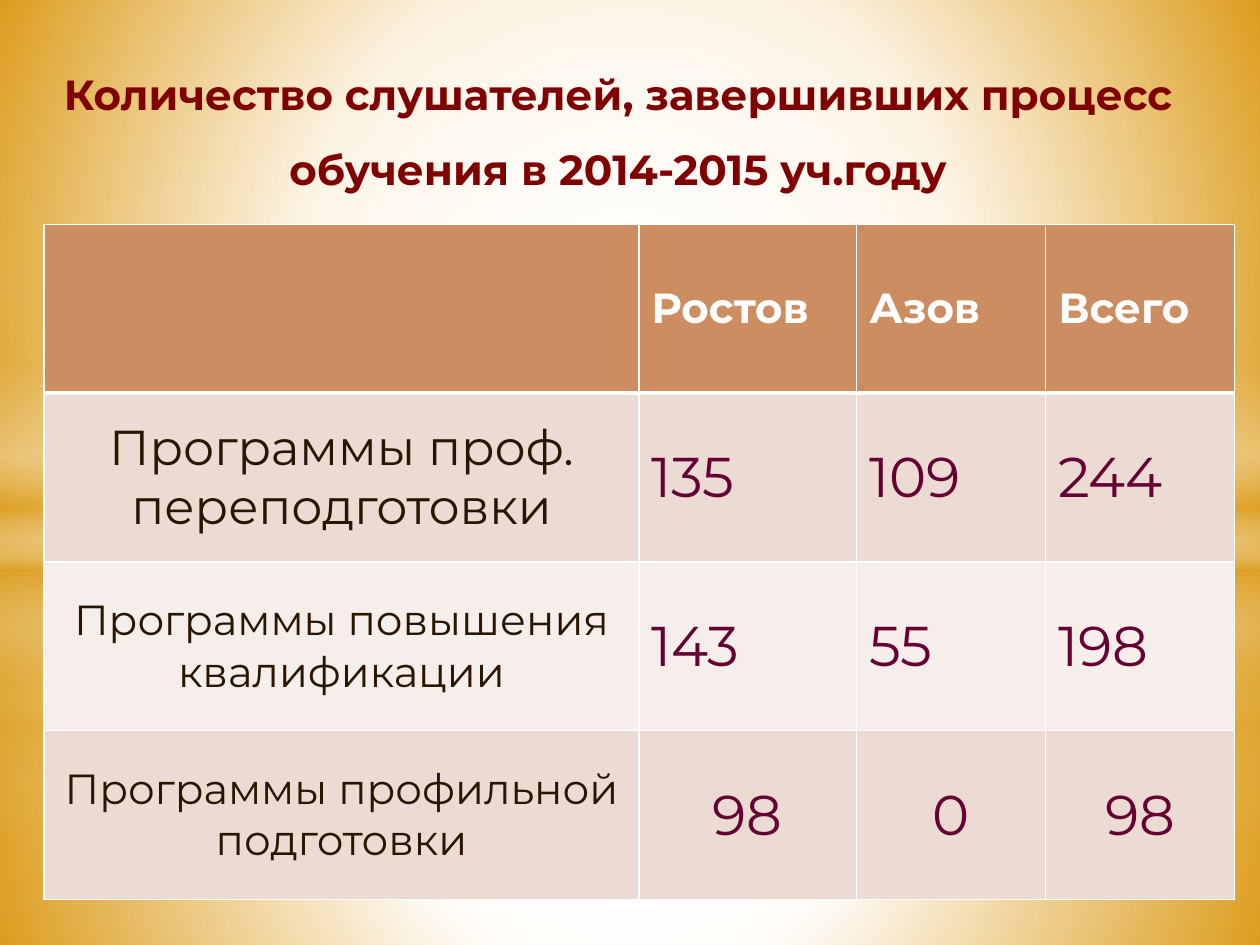
from dataclasses import dataclass

from lxml import etree
from pptx import Presentation
from pptx.dml.color import RGBColor
from pptx.enum.shapes import MSO_SHAPE
from pptx.enum.text import MSO_ANCHOR, MSO_AUTO_SIZE, PP_ALIGN
from pptx.oxml.ns import qn
from pptx.util import Inches, Pt

RECTANGLE, OVAL = MSO_SHAPE.RECTANGLE, MSO_SHAPE.OVAL
TOP, MIDDLE = MSO_ANCHOR.TOP, MSO_ANCHOR.MIDDLE
LEFT, CENTER = PP_ALIGN.LEFT, PP_ALIGN.CENTER
TITLE_ONLY_LAYOUT = 5


@dataclass(frozen=True)
class Theme:
    font: str = "Montserrat"
    title: str = "800000"
    white: str = "FFFFFF"
    gold: str = "DC9E1F"
    header_fill: str = "CC8E60"
    band_fills: tuple = ("ECDBD2", "F6EEEA")
    label: str = "2A1500"
    number: str = "660033"
    text_size: int = 24
    large_label_size: int = 28
    number_size: int = 32


THEME = Theme()
WHITE, GOLD = THEME.white, THEME.gold
CENTERED = (50, 50, 50, 50)

TITLE = "Количество слушателей, завершивших процесс обучения в 2014-2015 уч.году"
HEADERS = ("", "Ростов", "Азов", "Всего")
# label, label size, alignment of the numbers, numbers
PROGRAMS = (
    ("Программы проф. переподготовки", THEME.large_label_size, LEFT, (135, 109, 244)),
    ("Программы повышения квалификации", THEME.text_size, LEFT, (143, 55, 198)),
    ("Программы профильной подготовки", THEME.text_size, CENTER, (98, 0, 98)),
)
COLUMN_WIDTHS = (4.72, 1.73, 1.5, 1.5)
ROW_HEIGHT = 1.34


def set_gradient(fill, owner, stops, focus=None):
    """Fill with (position, colour, opacity) stops: circular to focus, or downward."""
    fill.solid()
    solid = owner.find(".//" + qn("a:solidFill"))
    gradient = etree.Element(qn("a:gradFill"), rotWithShape="1")
    stop_list = etree.SubElement(gradient, qn("a:gsLst"))
    for position, color, opacity in stops:
        stop = etree.SubElement(stop_list, qn("a:gs"), pos=str(position * 1000))
        rgb = etree.SubElement(stop, qn("a:srgbClr"), val=color)
        if opacity < 100:
            etree.SubElement(rgb, qn("a:alpha"), val=str(opacity * 1000))
    if focus:
        circle = etree.SubElement(gradient, qn("a:path"), path="circle")
        sides = {side: str(value * 1000) for side, value in zip("ltrb", focus)}
        etree.SubElement(circle, qn("a:fillToRect"), **sides)
    else:
        etree.SubElement(gradient, qn("a:lin"), ang="5400000", scaled="0")
    solid.getparent().replace(solid, gradient)


def add_glow(page, kind, top, height, stops, focus=CENTERED):
    """Add a translucent shape over the whole slide width."""
    shape = page.shapes.add_shape(kind, 0, Inches(top), Inches(10), Inches(height))
    shape.shadow.inherit = False
    shape.line.fill.background()
    set_gradient(shape.fill, shape._element.spPr, stops, focus)


def add_light_layer(page, horizon, band_top, opacities, halo_edge):
    """Add a floor and a sky meeting at the horizon, a light band and a halo."""
    floor, sky, edge = opacities
    add_glow(page, RECTANGLE, horizon, 7.5 - horizon,
             [(0, WHITE, floor[0]), (37, WHITE, floor[1]), (100, GOLD, edge)])
    add_glow(page, RECTANGLE, 0, horizon,
             [(0, WHITE, sky[0]), (48, WHITE, sky[1]), (100, GOLD, edge)])
    add_glow(page, RECTANGLE, band_top, 2.5,
             [(0, WHITE, 0), (29, WHITE, 30), (45, GOLD, 40),
              (55, WHITE, 26), (65, GOLD, 60), (100, WHITE, 0)], focus=None)
    add_glow(page, OVAL, 1.75, 5.58, [(0, WHITE, 100), (halo_edge, WHITE, 0)])


def add_background(page):
    stops = [(0, "FFF4E3", 100), (42, "FFCC7E", 100), (100, "E79200", 100)]
    set_gradient(page.background.fill, page._element, stops, (24, 44, 24, 12))
    add_light_layer(page, 5.58, 4.12, ((91, 76), (89, 62), 79), 56)
    add_light_layer(page, 4.23, 2.9, ((92, 77), (90, 63), 80), 54)


def write_text(frame, text, *, size, color, bold=False, align=LEFT, spacing=None):
    para = frame.paragraphs[0]
    para.alignment = align
    para.line_spacing = spacing
    span = para.add_run()
    span.text = text
    span.font.name = THEME.font
    span.font.size = Pt(size)
    span.font.bold = bold
    span.font.color.rgb = RGBColor.from_string(color)


def add_title(page):
    title = page.shapes.title
    title.left, title.top = Inches(0.22), Inches(0.29)
    title.width, title.height = Inches(9.37), Inches(1.31)
    frame = title.text_frame
    frame.word_wrap = True
    frame.auto_size = MSO_AUTO_SIZE.SHAPE_TO_FIT_TEXT
    frame.vertical_anchor = TOP
    write_text(frame, TITLE, size=THEME.text_size, color=THEME.title,
               bold=True, align=CENTER, spacing=1.5)
    page.shapes._spTree.append(title._element)  # in front of the background


def set_borders(cell, **widths):
    """Draw white cell borders; widths are points by side, in the order L, R, T, B."""
    properties = cell._tc.get_or_add_tcPr()
    for side, width in widths.items():
        line = etree.SubElement(properties, qn(f"a:ln{side}"), w=str(Pt(width)))
        fill = etree.SubElement(line, qn("a:solidFill"))
        etree.SubElement(fill, qn("a:srgbClr"), val=WHITE)


def format_cell(cell, text, fill, top_border=1, bottom_border=1, **text_format):
    set_borders(cell, L=1, R=1, T=top_border, B=bottom_border)
    cell.fill.solid()
    cell.fill.fore_color.rgb = RGBColor.from_string(fill)
    cell.vertical_anchor = MIDDLE
    if text:
        write_text(cell.text_frame, text, **text_format)


def add_program_table(page):
    row_count = len(PROGRAMS) + 1
    table = page.shapes.add_table(
        row_count, len(HEADERS), Inches(0.35), Inches(1.78),
        Inches(sum(COLUMN_WIDTHS)), Inches(ROW_HEIGHT * row_count)).table
    for column, width in zip(table.columns, COLUMN_WIDTHS):
        column.width = Inches(width)
    for row in table.rows:
        row.height = Inches(ROW_HEIGHT)

    for column, header in enumerate(HEADERS):
        format_cell(table.cell(0, column), header, THEME.header_fill, bottom_border=3,
                    size=THEME.text_size, color=WHITE, bold=True)
    for row, (label, label_size, align, numbers) in enumerate(PROGRAMS, 1):
        fill = THEME.band_fills[(row - 1) % 2]
        top_border = 3 if row == 1 else 1
        format_cell(table.cell(row, 0), label, fill, top_border,
                    size=label_size, color=THEME.label, align=CENTER)
        for column, number in enumerate(numbers, 1):
            format_cell(table.cell(row, column), str(number), fill, top_border,
                        size=THEME.number_size, color=THEME.number, align=align)


def main():
    deck = Presentation()
    deck.slide_width, deck.slide_height = Inches(10), Inches(7.5)
    page = deck.slides.add_slide(deck.slide_layouts[TITLE_ONLY_LAYOUT])
    add_background(page)
    add_title(page)
    add_program_table(page)
    deck.save("out.pptx")


if __name__ == "__main__":
    main()
